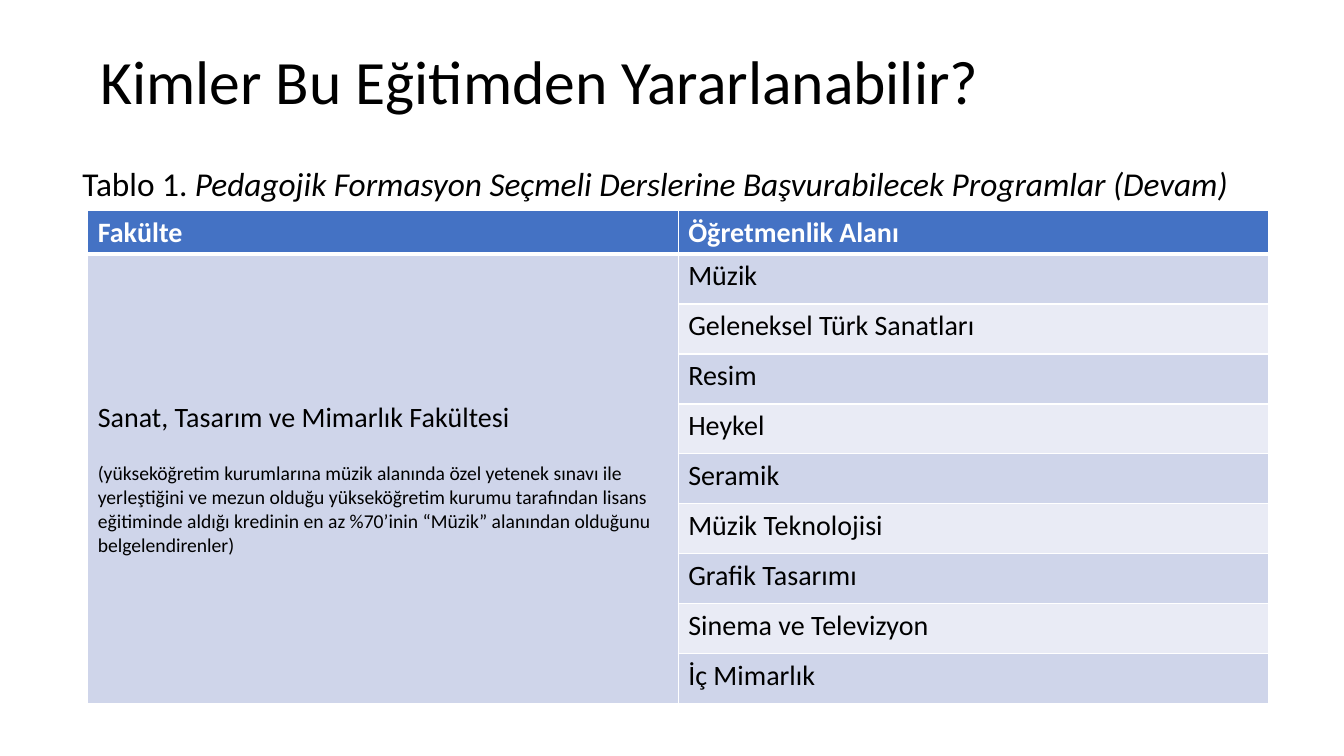
"""Build the slide listing the programmes eligible for pedagogical formation courses."""
from pptx import Presentation
from pptx.dml.color import RGBColor
from pptx.enum.text import MSO_ANCHOR as Anchor
from pptx.oxml.xmlchemy import OxmlElement as Element
from pptx.util import Pt

TITLE = "Kimler Bu Eğitimden Yararlanabilir?"
CAPTION = [
    ("Tablo 1. ", False),
    ("Pedagojik Formasyon Seçmeli Derslerine Başvurabilecek Programlar (Devam)", True),
]
HEADINGS = ["Fakülte", "Öğretmenlik Alanı"]
FACULTY = "Sanat, Tasarım ve Mimarlık Fakültesi"
CONDITION = (
    "(yükseköğretim kurumlarına müzik alanında özel yetenek sınavı ile yerleştiğini "
    "ve mezun olduğu yükseköğretim kurumu tarafından lisans eğitiminde aldığı "
    "kredinin en az %70’inin “Müzik” alanından olduğunu belgelendirenler)"
)
FIELDS = [
    "Müzik", "Geleneksel Türk Sanatları", "Resim", "Heykel", "Seramik",
    "Müzik Teknolojisi", "Grafik Tasarımı", "Sinema ve Televizyon", "İç Mimarlık",
]
BLACK, WHITE, BLUE = "000000", "FFFFFF", "4472C4"
BANDS = ["CFD5EA", "E9EBF5"]
TABLE_LEFT, TABLE_TOP, COLUMN_WIDTH = 62.64, 150.2, 421.8
HEADER_HEIGHT, ROW_HEIGHT = 29.5, 35.7


def colour(value):
    return RGBColor.from_string(value)


def add_span(para, text, size, shade=BLACK, **extra):
    span = para.add_run()
    span.text = text
    values = {"name": "Calibri", "size": Pt(size), **extra}
    for name, value in values.items():
        setattr(span.font, name, value)
    span.font.color.rgb = colour(shade)


def add_box(page, place, anchor, spans, size, **spacing):
    frame = page.shapes.add_textbox(*map(Pt, place)).text_frame
    frame.word_wrap = True
    frame.vertical_anchor = anchor
    para = frame.paragraphs[0]
    for name, value in spacing.items():
        setattr(para, name, value)
    for text, italic in spans:
        add_span(para, text, size, italic=italic)


def style_cell(cell, fill, bottom=1):
    properties = cell._tc.get_or_add_tcPr()
    for side, width in {"L": 1, "R": 1, "T": 1, "B": bottom}.items():
        line = Element(f"a:ln{side}")
        line.set("w", str(Pt(width)))
        solid, shade = Element("a:solidFill"), Element("a:srgbClr")
        shade.set("val", WHITE)
        solid.append(shade)
        line.append(solid)
        properties.append(line)
    cell.fill.solid()
    cell.fill.fore_color.rgb = colour(fill)


def add_programmes(page):
    rows = len(FIELDS) + 1
    height = HEADER_HEIGHT + ROW_HEIGHT * len(FIELDS)
    place = (TABLE_LEFT, TABLE_TOP, 2 * COLUMN_WIDTH, height)
    table = page.shapes.add_table(rows, 2, *map(Pt, place)).table
    for column in table.columns:
        column.width = Pt(COLUMN_WIDTH)
    for index, row in enumerate(table.rows):
        row.height = Pt(ROW_HEIGHT if index else HEADER_HEIGHT)
    for column, heading in enumerate(HEADINGS):
        cell = table.cell(0, column)
        style_cell(cell, BLUE, bottom=3)
        add_span(cell.text_frame.paragraphs[0], heading, 20, WHITE, bold=True)
    for index, field in enumerate(FIELDS):
        style_cell(table.cell(index + 1, 0), BANDS[0])
        cell = table.cell(index + 1, 1)
        style_cell(cell, BANDS[index % 2])
        add_span(cell.text_frame.paragraphs[0], field, 20)
    faculty = table.cell(1, 0)
    faculty.merge(table.cell(rows - 1, 0))
    faculty.vertical_anchor = Anchor.MIDDLE
    add_span(faculty.text_frame.paragraphs[0], FACULTY, 20)
    para = faculty.text_frame.add_paragraph()
    para.space_before = Pt(19.5)
    add_span(para, CONDITION, 14)


def main():
    deck = Presentation()
    deck.slide_width, deck.slide_height = Pt(960), Pt(540)
    page = deck.slides.add_slide(deck.slide_layouts[6])
    add_box(page, (64.8, 22.3, 828, 75.6), Anchor.MIDDLE, [(TITLE, False)], 44,
            line_spacing=0.9)
    add_programmes(page)
    add_box(page, (51.84, 118.8, 908, 51.8), Anchor.TOP, CAPTION, 23.8,
            line_spacing=0.8, space_before=Pt(10))
    deck.save("out.pptx")


if __name__ == "__main__":
    main()
